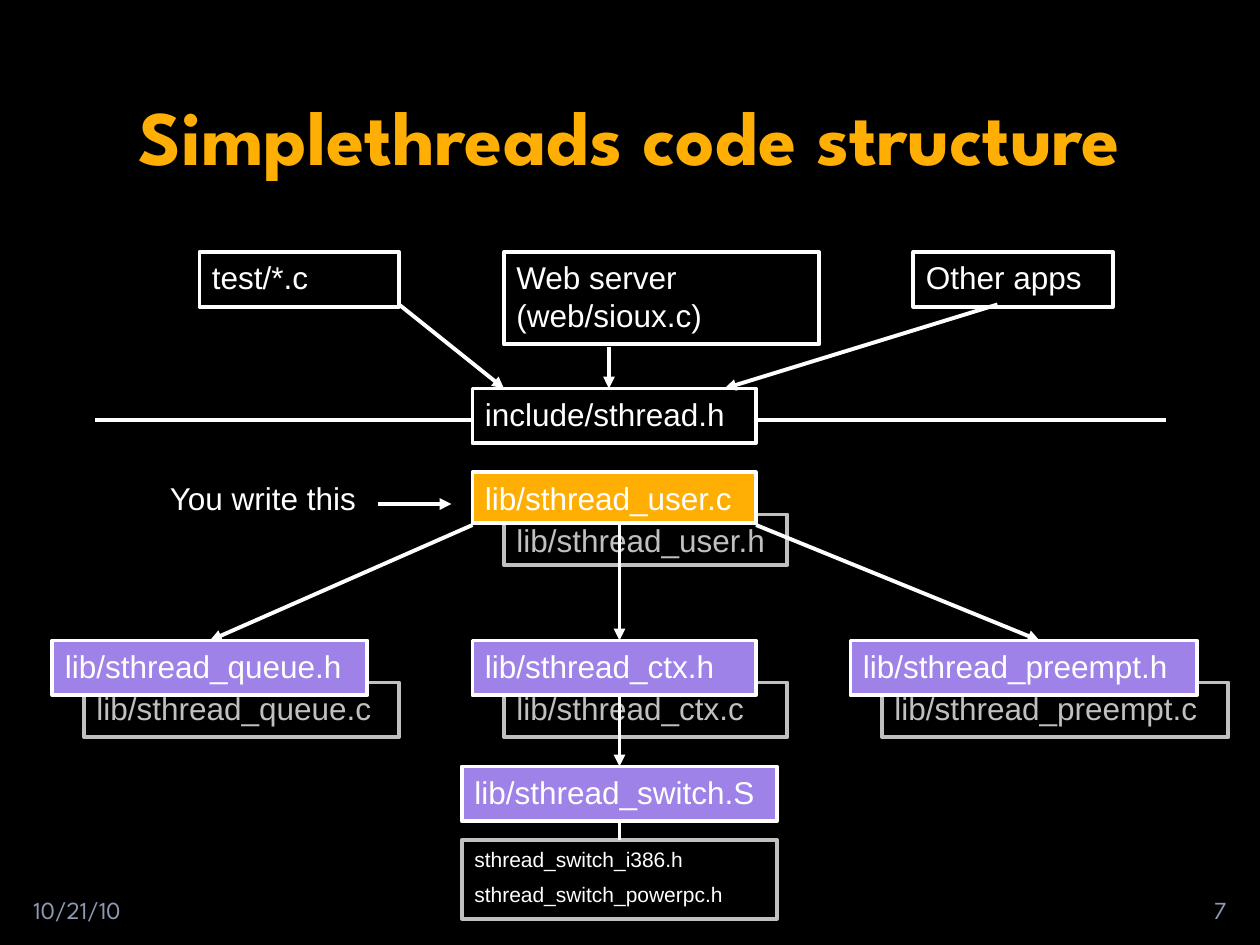
"""Build the Simplethreads code structure slide on a grid of 120 columns by 90 rows."""
from lxml.etree import SubElement
from pptx import Presentation
from pptx.dml.color import RGBColor
from pptx.enum.shapes import MSO_CONNECTOR, MSO_SHAPE
from pptx.enum.text import MSO_ANCHOR as ANCHOR, PP_ALIGN as ALIGN
from pptx.oxml.ns import qn
from pptx.util import Inches, Pt

COLORS = {
    name: RGBColor.from_string(value)
    for name, value in {
        "black": "000000",
        "white": "FFFFFF",
        "silver": "C0C0C0",
        "orange": "FFAF03",
        "purple": "9E82E7",
        "footer": "8D9AB3",
    }.items()
}
LINE_WIDTH = Pt(2.25)
TALL, SHORT = 5.2, 4.8
TOP, BOTTOM = 0, 2

presentation = Presentation()
presentation.slide_width, presentation.slide_height = Inches(10), Inches(7.5)
column = presentation.slide_width / 120
row = presentation.slide_height / 90
slide = presentation.slides.add_slide(presentation.slide_layouts[6])
slide.background.fill.solid()
slide.background.fill.fore_color.rgb = COLORS["black"]


def write(shape, text, size=18, color="white", font="Arial", bold=False,
          align=ALIGN.LEFT, anchor=ANCHOR.TOP):
    frame = shape.text_frame
    frame.word_wrap = True
    frame.vertical_anchor = anchor
    frame.text = text
    for index, paragraph in enumerate(frame.paragraphs):
        paragraph.alignment = align
        paragraph.space_before = Pt(size / 2 if index else 0)
        for run in paragraph.runs:
            run.font.size = Pt(size)
            run.font.name = font
            run.font.bold = bold
            run.font.color.rgb = COLORS[color]


def add_box(text, left, top, width, height, fill=None, line="white", color="white", size=18):
    box = slide.shapes.add_shape(
        MSO_SHAPE.RECTANGLE,
        int(left * column), int(top * row), int(width * column), int(height * row),
    )
    box.shadow.inherit = False
    if fill:
        box.fill.solid()
        box.fill.fore_color.rgb = COLORS[fill]
    else:
        box.fill.background()
    box.line.color.rgb = COLORS[line]
    box.line.width = LINE_WIDTH
    write(box, text, size, color)
    return box


heading_style = {"font": "League Spartan", "anchor": ANCHOR.MIDDLE}
footer_style = {**heading_style, "size": 14, "color": "footer"}
labels = [
    ("Simplethreads code structure", 3, 7.7, 114, 10.3,
     {**heading_style, "size": 44, "color": "orange", "bold": True, "align": ALIGN.CENTER}),
    ("10/21/10", 2, 84.2, 21, SHORT, footer_style),
    ("7", 110, 84.2, 8, SHORT, {**footer_style, "align": ALIGN.RIGHT}),
    ("You write this", 15, 45, 23, SHORT, {}),
]
for text, left, top, width, height, style in labels:
    label = slide.shapes.add_textbox(
        int(left * column), int(top * row), int(width * column), int(height * row)
    )
    write(label, text, **style)

for text, left, top, width, height in [
    ("test/*.c", 19, 24, 19, TALL),
    ("Web server (web/sioux.c)", 48, 24, 30, 8.8),
    ("Other apps", 87, 24, 19, TALL),
    ("include/sthread.h", 45, 37, 27, TALL),
]:
    add_box(text, left, top, width, height)

modules_front = {}
for name, front, back, left, top, width, height, fill in [
    ("user", "c", "h", 45, 45, 27, SHORT, "orange"),
    ("queue", "h", "c", 5, 61, 30, TALL, "purple"),
    ("ctx", "h", "c", 45, 61, 27, TALL, "purple"),
    ("preempt", "h", "c", 81, 61, 33, TALL, "purple"),
]:
    add_box(f"lib/sthread_{name}.{back}", left + 3, top + 4, width, height,
            line="silver", color="silver")
    modules_front[name] = add_box(f"lib/sthread_{name}.{front}", left, top, width, height, fill)

switch = add_box("lib/sthread_switch.S", 44, 73, 30, TALL, "purple")
switch_headers = add_box("sthread_switch_i386.h\nsthread_switch_powerpc.h",
                         44, 80, 30, 7.5, line="silver", size=12)

for start, end, arrow, begin_joint, end_joint in [
    ((45, 40), (9, 40), False, None, None),
    ((72, 40), (111, 40), False, None, None),
    ((38, 29), (48, 37), True, None, None),
    ((58, 33), (58, 37), True, None, None),
    ((95, 29), (69, 37), True, None, None),
    ((36, 48), (43, 48), True, None, None),
    ((45, 50), (20, 61), True, None, (modules_front["queue"], TOP)),
    ((59, 50), (59, 61), True, None, None),
    ((72, 50), (99, 61), True, None, None),
    ((59, 66), (59, 73), True, None, (switch, TOP)),
    ((59, 78), (59, 80), False, (switch, BOTTOM), (switch_headers, TOP)),
]:
    connector = slide.shapes.add_connector(
        MSO_CONNECTOR.STRAIGHT,
        int(start[0] * column), int(start[1] * row), int(end[0] * column), int(end[1] * row),
    )
    if begin_joint:
        connector.begin_connect(*begin_joint)
    if end_joint:
        connector.end_connect(*end_joint)
    connector.line.color.rgb = COLORS["white"]
    connector.line.width = LINE_WIDTH
    if arrow:
        SubElement(connector.line._get_or_add_ln(), qn("a:tailEnd"), type="triangle")
    SubElement(connector._element.spPr, qn("a:effectLst"))

presentation.save("out.pptx")
